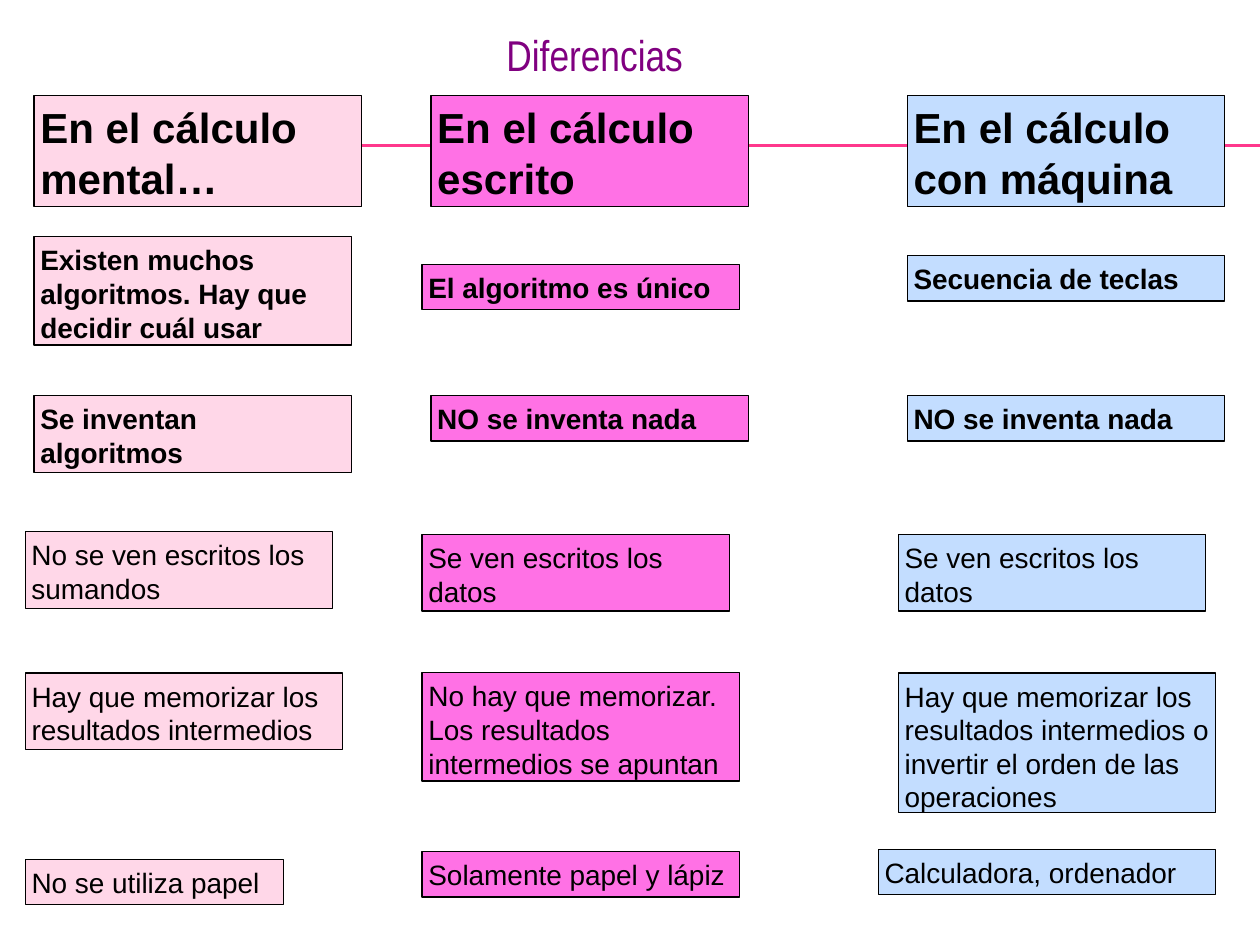
from lxml import etree
from pptx import Presentation
from pptx.dml.color import RGBColor
from pptx.enum.shapes import MSO_CONNECTOR, MSO_SHAPE
from pptx.enum.text import MSO_ANCHOR, PP_ALIGN
from pptx.oxml.ns import qn
from pptx.util import Inches, Pt

RECT = MSO_SHAPE.RECTANGLE
STRAIGHT = MSO_CONNECTOR.STRAIGHT
TOP, MIDDLE = MSO_ANCHOR.TOP, MSO_ANCHOR.MIDDLE
LEFT, CENTER = PP_ALIGN.LEFT, PP_ALIGN.CENTER

BLACK = RGBColor(0x00, 0x00, 0x00)
PURPLE = RGBColor(0x80, 0x00, 0x80)
ROSE = RGBColor(0xFF, 0x38, 0x8C)
PALE = RGBColor(0xFF, 0xD7, 0xE8)
PINK = RGBColor(0xFF, 0x71, 0xE5)
BLUE = RGBColor(0xC3, 0xDD, 0xFF)

TITLE = "Diferencias"
HEAD_TOP, HEAD_TALL = 0.76, 0.88
HEAD_SIZE, BODY_SIZE = 24, 16
INSET, LINE_TALL = 0.05, 0.25

# Each column: fill, heading (left, width, text),
# then cells (left, top, width, lines, bold, text)
COLUMNS = [
    (PALE, (0.27, 2.6, "En el cálculo mental…"), [
        (0.27, 1.88, 2.52, 3, True,
         "Existen muchos algoritmos. Hay que decidir cuál usar"),
        (0.27, 3.14, 2.52, 2, True, "Se inventan algoritmos"),
        (0.2, 4.22, 2.44, 2, False, "No se ven escritos los sumandos"),
        (0.2, 5.34, 2.52, 2, False,
         "Hay que memorizar los resultados intermedios"),
        (0.2, 6.82, 2.05, 1, False, "No se utiliza papel"),
    ]),
    (PINK, (3.42, 2.52, "En el cálculo escrito"), [
        (3.35, 2.1, 2.52, 1, True, "El algoritmo es único"),
        (3.42, 3.14, 2.52, 1, True, "NO se inventa nada"),
        (3.35, 4.24, 2.44, 2, False, "Se ven escritos los datos"),
        (3.35, 5.34, 2.52, 3, False,
         "No hay que memorizar. Los resultados intermedios se apuntan"),
        (3.35, 6.76, 2.52, 1, False, "Solamente papel y lápiz"),
    ]),
    (BLUE, (7.2, 2.52, "En el cálculo con máquina"), [
        (7.2, 2.03, 2.52, 1, True, "Secuencia de teclas"),
        (7.2, 3.14, 2.52, 1, True, "NO se inventa nada"),
        (7.13, 4.24, 2.44, 2, False, "Se ven escritos los datos"),
        (7.13, 5.34, 2.52, 4, False,
         "Hay que memorizar los resultados intermedios o invertir "
         "el orden de las operaciones"),
        (6.97, 6.74, 2.68, 1, False, "Calculadora, ordenador"),
    ]),
]


def write(shape, text, size, color, bold=False, face="Arial",
          inset=INSET, align=LEFT, anchor=TOP):
    frame = shape.text_frame
    frame.word_wrap = True
    frame.vertical_anchor = anchor
    frame.margin_left = frame.margin_right = Inches(inset)
    frame.margin_top = frame.margin_bottom = Inches(inset)
    frame.text = text
    para = frame.paragraphs[0]
    para.alignment = align
    font = para.runs[0].font
    font.name, font.size, font.bold = face, Pt(size), bold
    font.color.rgb = color


def add_box(slide, left, top, width, height, fill, text, size, bold):
    box = slide.shapes.add_shape(RECT, Inches(left), Inches(top),
                                 Inches(width), Inches(height))
    box.shadow.inherit = False
    box.fill.solid()
    box.fill.fore_color.rgb = fill
    box.line.color.rgb = BLACK
    box.line.width = Pt(0.75)
    write(box, text, size, BLACK, bold)


def add_rule(slide, top):
    rule = slide.shapes.add_connector(STRAIGHT, Inches(0.56), Inches(top),
                                      Inches(10), Inches(top))
    rule.line.color.rgb = ROSE
    rule.line.width = Pt(0.75)
    etree.SubElement(rule._element.spPr, qn("a:effectLst"))


def main():
    deck = Presentation()
    deck.slide_width, deck.slide_height = Inches(10), Inches(7.5)
    slide = deck.slides.add_slide(deck.slide_layouts[6])

    for top in (1.15, 1.16):
        add_rule(slide, top)

    title = slide.shapes.add_textbox(Inches(2.95), Inches(0.21),
                                     Inches(3.54), Inches(0.44))
    write(title, TITLE, 24.6, PURPLE, face="Arial Narrow",
          inset=0, align=CENTER, anchor=MIDDLE)

    for fill, (left, width, head), cells in COLUMNS:
        add_box(slide, left, HEAD_TOP, width, HEAD_TALL, fill, head,
                HEAD_SIZE, True)
        for left, top, width, lines, bold, text in cells:
            height = 2 * INSET + 0.01 + lines * LINE_TALL
            add_box(slide, left, top, width, height, fill, text,
                    BODY_SIZE, bold)

    deck.save("out.pptx")


if __name__ == "__main__":
    main()
